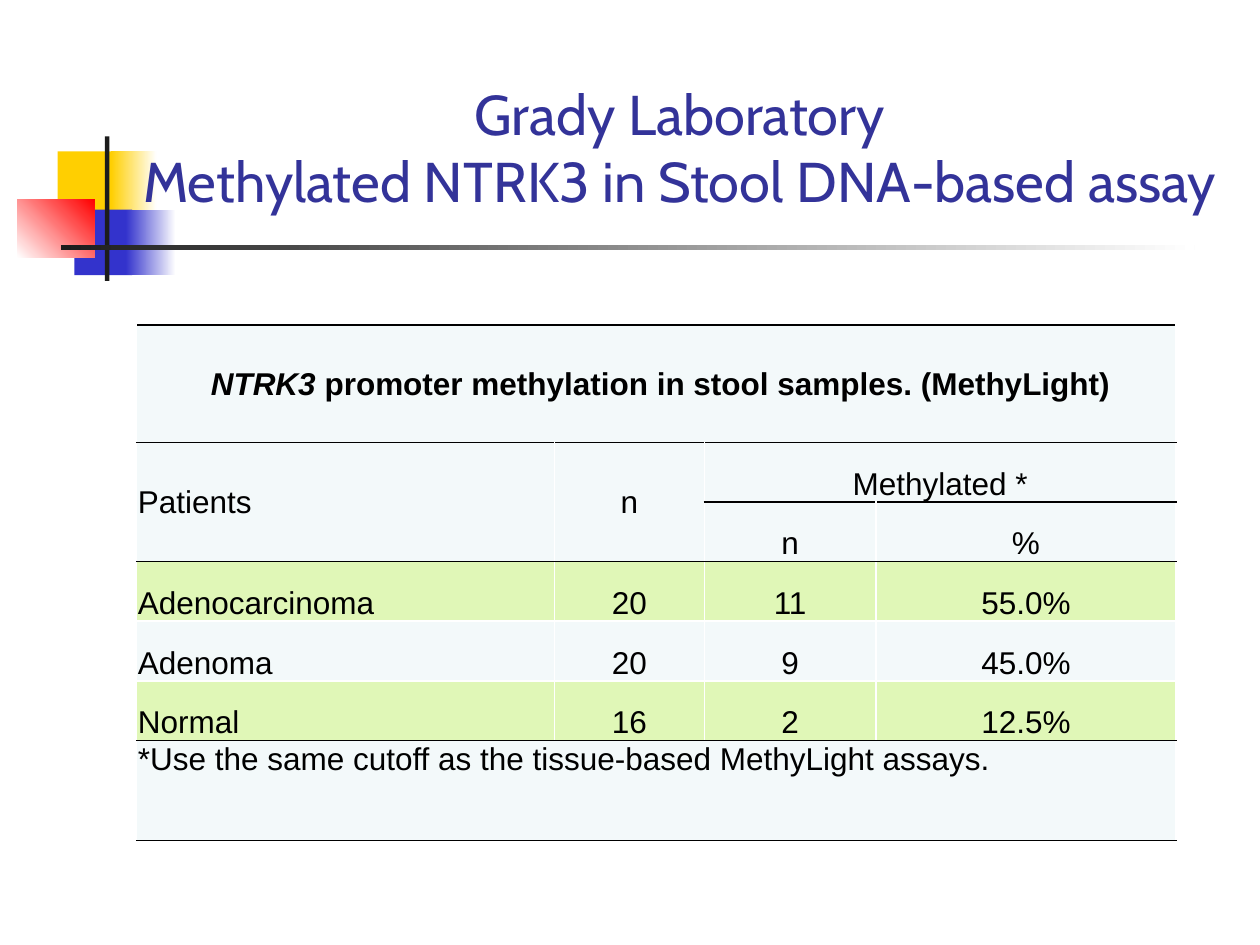
from dataclasses import dataclass
from typing import NamedTuple, Optional

from lxml import etree
from pptx import Presentation
from pptx.dml.color import RGBColor
from pptx.enum.shapes import MSO_SHAPE
from pptx.enum.text import MSO_ANCHOR, PP_ALIGN
from pptx.oxml.ns import qn
from pptx.util import Pt

RECT = MSO_SHAPE.RECTANGLE
TOP, MIDDLE, BOTTOM = MSO_ANCHOR.TOP, MSO_ANCHOR.MIDDLE, MSO_ANCHOR.BOTTOM
LEFT, CENTER = PP_ALIGN.LEFT, PP_ALIGN.CENTER


@dataclass(frozen=True)
class Theme:
    title: str = "333399"
    ink: str = "000000"
    white: str = "FFFFFF"
    gold: str = "FFCF01"
    blue: str = "3333CC"
    red: str = "FF0000"
    dark: str = "1C1C1C"
    pale: str = "F3F9FA"
    green: str = "E0F7B7"
    head_font: str = "Cabin"
    body_font: str = "Arial"
    head_size: int = 32
    body_size: int = 18


THEME = Theme()


class Block(NamedTuple):
    left: float
    top: float
    width: float
    height: float
    start: str
    end: Optional[str] = None
    angle: int = 0


class Entry(NamedTuple):
    row: int
    col: int
    text: str
    anchor: MSO_ANCHOR = BOTTOM
    rows: int = 1
    cols: int = 1


BLOCKS = [
    Block(33, 86.5, 34.5, 37.5, THEME.gold),
    Block(63.5, 86.5, 26, 37.5, THEME.gold, THEME.white),
    Block(42.5, 119.75, 33, 37.5, THEME.blue),
    Block(72, 119.75, 28.5, 37.5, THEME.blue, THEME.white),
    Block(10, 113.75, 44, 33.5, THEME.white, THEME.red, 45),
    Block(60, 78, 2.5, 82.5, THEME.dark),
    Block(34.75, 140, 648, 2.75, THEME.dark, THEME.white),
]

WIDTHS = [238.75, 85.75, 98, 171.5]
HEIGHTS = [67, 34.1, 34.1, 34.1, 34.1, 34.1, 57.3]
RULED = {-1, 0, 1, 2, 5, 6}
SHADED = {3, 5}
PATIENTS = [
    ("Adenocarcinoma", "20", "11", "55.0%"),
    ("Adenoma", "20", "9", "45.0%"),
    ("Normal", "16", "2", "12.5%"),
]
ENTRIES = [
    Entry(0, 0, " ", MIDDLE, cols=4),
    Entry(1, 0, "Patients", MIDDLE, rows=2),
    Entry(1, 1, "n", MIDDLE, rows=2),
    Entry(1, 2, "Methylated *", cols=2),
    Entry(2, 2, "n"),
    Entry(2, 3, "%"),
    *(Entry(row, col, text)
      for row, line in enumerate(PATIENTS, 3)
      for col, text in enumerate(line)),
    Entry(6, 0, "*Use the same cutoff as the tissue-based MethyLight assays.", TOP, cols=4),
]


def rgb(code: str) -> RGBColor:
    return RGBColor.from_string(code)


def style(run, font: str, size: int, color: str) -> None:
    run.font.name = font
    run.font.size = Pt(size)
    run.font.color.rgb = rgb(color)


def draw_block(slide, block: Block) -> None:
    shape = slide.shapes.add_shape(
        RECT, Pt(block.left), Pt(block.top), Pt(block.width), Pt(block.height))
    shape.shadow.inherit = False
    shape.line.fill.background()
    if block.end is None:
        shape.fill.solid()
        shape.fill.fore_color.rgb = rgb(block.start)
        return
    shape.fill.gradient()
    shape.fill.gradient_angle = block.angle
    for stop, color in zip(shape.fill.gradient_stops, (block.start, block.end)):
        stop.color.rgb = rgb(color)


def draw_title(slide) -> None:
    title = slide.shapes.title
    slide.shapes._spTree.append(title._element)
    title.left, title.top = Pt(55.5), Pt(42)
    title.width, title.height = Pt(666), Pt(84)
    frame = title.text_frame
    frame.text = "Grady Laboratory\vMethylated NTRK3 in Stool DNA-based assay"
    frame.word_wrap = True
    frame.vertical_anchor = BOTTOM
    para = frame.paragraphs[0]
    para.alignment = CENTER
    for run in para.runs:
        style(run, THEME.head_font, THEME.head_size, THEME.title)


def add_edge(cell, side: str, color: str) -> None:
    props = cell._tc.get_or_add_tcPr()
    line = etree.SubElement(props, qn(f"a:ln{side}"), w=str(Pt(1)))
    fill = etree.SubElement(line, qn("a:solidFill"))
    etree.SubElement(fill, qn("a:srgbClr"), val=color)


def format_cell(cell, row: int) -> None:
    above = THEME.ink if row - 1 in RULED else THEME.white
    below = THEME.ink if row in RULED else THEME.white
    for side, color in zip("LRTB", (THEME.white, THEME.white, above, below)):
        add_edge(cell, side, color)
    cell.fill.solid()
    cell.fill.fore_color.rgb = rgb(THEME.green if row in SHADED else THEME.pale)
    cell.margin_left = cell.margin_right = cell.margin_top = Pt(0.75)
    cell.margin_bottom = 0


def fill_entry(table, entry: Entry) -> None:
    cell = table.cell(entry.row, entry.col)
    if entry.rows * entry.cols > 1:
        cell.merge(table.cell(entry.row + entry.rows - 1, entry.col + entry.cols - 1))
    cell.text_frame.text = entry.text
    cell.vertical_anchor = entry.anchor
    para = cell.text_frame.paragraphs[0]
    para.alignment = CENTER if entry.col or entry.row == 0 else LEFT
    if entry.row == 0:
        para.add_run().text = "NTRK3"
        para.add_run().text = " promoter methylation in stool samples. (MethyLight)"
        para.runs[1].font.italic = True
    for run in para.runs:
        style(run, THEME.body_font, THEME.body_size, THEME.ink)
        run.font.bold = entry.row == 0


def draw_table(slide) -> None:
    table = slide.shapes.add_table(
        len(HEIGHTS), len(WIDTHS), Pt(78), Pt(185.75),
        Pt(sum(WIDTHS)), Pt(sum(HEIGHTS))).table
    table.first_row = table.horz_banding = False
    for col, width in zip(table.columns, WIDTHS):
        col.width = Pt(width)
    for index, (row, height) in enumerate(zip(table.rows, HEIGHTS)):
        row.height = Pt(height)
        for cell in row.cells:
            format_cell(cell, index)
    for entry in ENTRIES:
        fill_entry(table, entry)


def main() -> None:
    deck = Presentation()
    deck.slide_width, deck.slide_height = Pt(720), Pt(540)
    slide = deck.slides.add_slide(deck.slide_layouts[5])
    for block in BLOCKS:
        draw_block(slide, block)
    draw_title(slide)
    draw_table(slide)
    deck.save("out.pptx")


if __name__ == "__main__":
    main()
